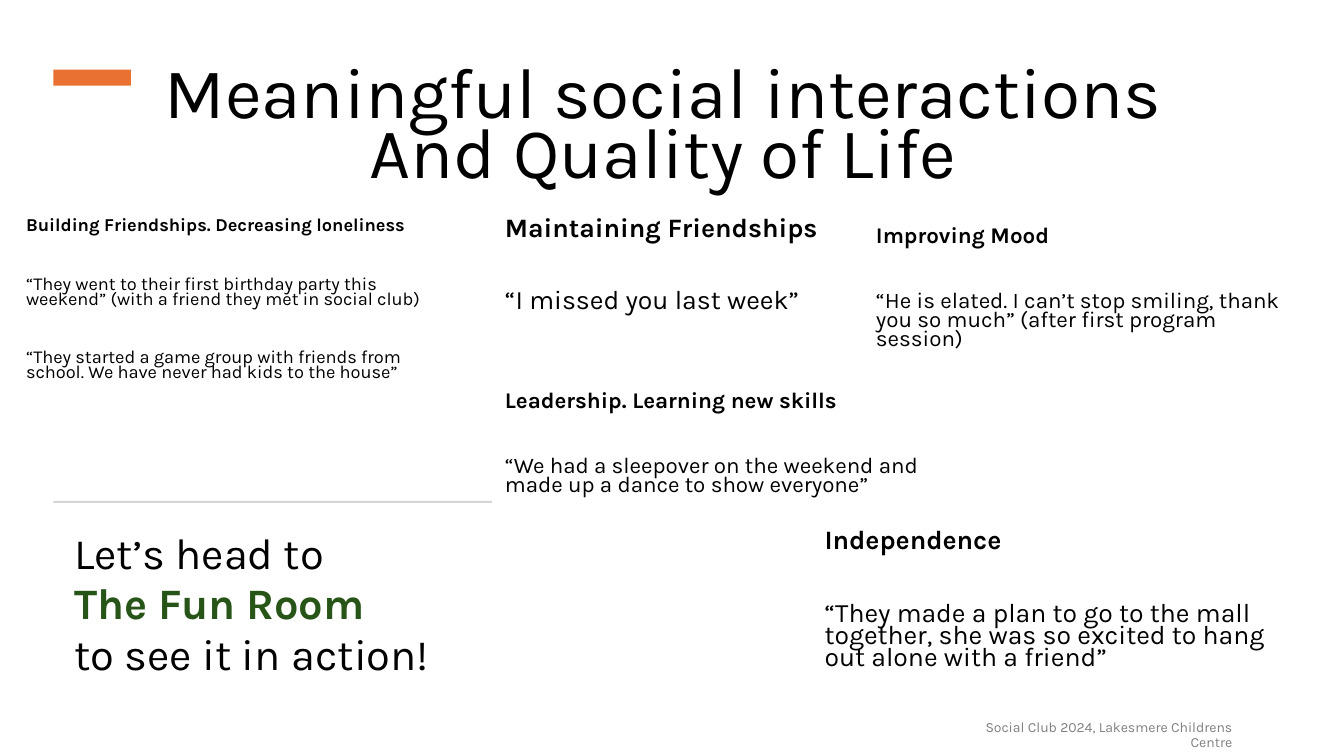
from pptx import Presentation
from pptx.dml.color import RGBColor
from pptx.enum.shapes import MSO_SHAPE
from pptx.enum.text import MSO_ANCHOR, PP_ALIGN
from pptx.util import Inches, Pt

FONT = "Karla"
FONT_LINE_HEIGHT = 1.17
TIGHT = 0.7
COLORS = {
    "background": "FFFFFF",
    "text": "000000",
    "accent": "E97132",
    "divider": "D5D5D5",
    "venue": "275417",
    "footer": "808080",
}

# Left, top, width, height, font size, heading, quotes
THEMES = [
    (0.16, 2.13, 4.41, 1.92, 13, "Building Friendships. Decreasing loneliness", [
        "“They went to their first birthday party this weekend” "
        "(with a friend they met in social club)",
        "“They started a game group with friends from school. "
        "We have never had kids to the house”"]),
    (4.91, 2.13, 3.83, 1.08, 19, "Maintaining Friendships", [
        "“I missed you last week”"]),
    (8.59, 2.22, 4.4, 1.32, 16, "Improving Mood", [
        "“He is elated. I can’t stop smiling, thank you so much” "
        "(after first program session)"]),
    (4.91, 3.85, 4.4, 1.32, 16, "Leadership. Learning new skills", [
        "“We had a sleepover on the weekend and made up a dance to show everyone”"]),
    (8.08, 5.23, 4.72, 1.54, 19, "Independence", [
        "“They made a plan to go to the mall together, "
        "she was so excited to hang out alone with a friend”"]),
]


def color(name):
    return RGBColor.from_string(COLORS[name])


def add_bar(slide, left, top, width, height, fill):
    shape = slide.shapes.add_shape(
        MSO_SHAPE.RECTANGLE, Inches(left), Inches(top), Inches(width), Inches(height))
    shape.shadow.inherit = False
    shape.fill.solid()
    shape.fill.fore_color.rgb = color(fill)
    shape.line.fill.background()


def add_text(slide, left, top, width, height, lines, size, fill="text",
             align=PP_ALIGN.LEFT, anchor=MSO_ANCHOR.TOP, spacing=TIGHT, before=0):
    """Add a wrapped text box with one paragraph per line and return its paragraphs."""
    box = slide.shapes.add_textbox(
        Inches(left), Inches(top), Inches(width), Inches(height))
    frame = box.text_frame
    frame.word_wrap = True
    frame.vertical_anchor = anchor
    frame.text = "\n".join(lines)
    for paragraph in frame.paragraphs:
        paragraph.alignment = align
        paragraph.line_spacing = spacing
        paragraph.space_before = Pt(before)
        paragraph.font.name = FONT
        paragraph.font.size = Pt(size)
        paragraph.font.color.rgb = color(fill)
    return frame.paragraphs


def add_theme(slide, left, top, width, height, size, heading, quotes):
    """Add a bold heading with quotes set one line apart."""
    paragraphs = add_text(
        slide, left, top, width, height, [heading, *quotes], size, before=10)
    paragraphs[0].font.bold = True
    for paragraph in paragraphs[1:]:
        paragraph.space_before = Pt(round(20 + TIGHT * FONT_LINE_HEIGHT * size, 1))


def main():
    presentation = Presentation()
    presentation.slide_width = Inches(13.33)
    presentation.slide_height = Inches(7.5)
    slide = presentation.slides.add_slide(presentation.slide_layouts[6])
    slide.background.fill.solid()
    slide.background.fill.fore_color.rgb = color("background")

    # Accent bar and divider
    add_bar(slide, 0.53, 0.69, 0.77, 0.16, "accent")
    add_bar(slide, 0.53, 4.97, 4.35, 0.02, "divider")

    # Title
    add_text(slide, 0.83, 0.49, 11.5, 1.45,
             ["Meaningful social interactions", "And Quality of Life"], 51,
             align=PP_ALIGN.CENTER, anchor=MSO_ANCHOR.BOTTOM)

    # Themes with quotes
    for theme in THEMES:
        add_theme(slide, *theme)

    # Invitation
    invitation = add_text(
        slide, 0.64, 5.31, 4.78, 1.54,
        ["Let’s head to", "The Fun Room", "to see it in action!"], 31, before=10)
    invitation[1].font.bold = True
    invitation[1].font.color.rgb = color("venue")

    # Footer
    footer = add_text(
        slide, 9.25, 7.1, 3.07, 0.4, ["Social Club 2024, Lakesmere Childrens Centre"],
        10, "footer", PP_ALIGN.RIGHT, MSO_ANCHOR.MIDDLE, spacing=0.9)
    footer[0].space_after = Pt(6)

    presentation.save("out.pptx")


if __name__ == "__main__":
    main()
